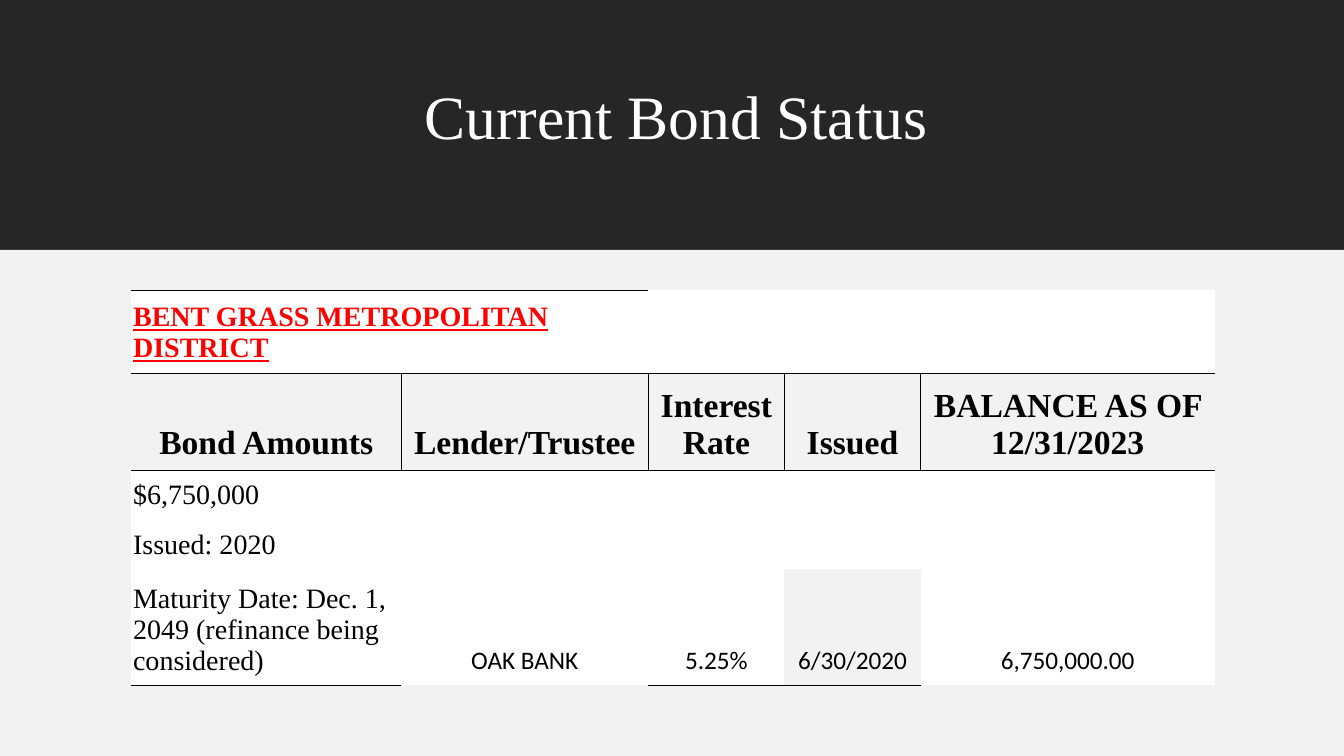
import pptx
import pptx.util
import pptx.dml.color
import pptx.enum.shapes
import pptx.enum.text
import pptx.oxml
import pptx.oxml.ns

Inches, Pt = pptx.util.Inches, pptx.util.Pt
RGB = pptx.dml.color.RGBColor
ALIGN = pptx.enum.text.PP_ALIGN
ANCHOR = pptx.enum.text.MSO_ANCHOR

BLACK = RGB(0, 0, 0)
WHITE = RGB(255, 255, 255)
DARK = RGB(0x26, 0x26, 0x26)
PALE = RGB(0xF2, 0xF2, 0xF2)
RED = RGB(255, 0, 0)
PLAIN = "{2D5ABB26-0587-4C30-8999-92F81FD0307C}"  # table style without lines


class Deck:
    serif = "Times New Roman"
    sans = "Calibri"

    def __init__(self, wide, high):
        self.prs = pptx.Presentation()
        self.prs.slide_width = Inches(wide)
        self.prs.slide_height = Inches(high)
        self.slide = self.prs.slides.add_slide(self.prs.slide_layouts[6])

    def band(self, top, high, color):
        shape = self.slide.shapes.add_shape(
            pptx.enum.shapes.MSO_SHAPE.RECTANGLE,
            0, Inches(top), self.prs.slide_width, Inches(high))
        shape.shadow.inherit = False
        shape.fill.solid()
        shape.fill.fore_color.rgb = color
        shape.line.fill.background()

    def text(self, frame, words, align, color, **font):
        para = frame.paragraphs[0]
        para.alignment = align
        run = para.add_run()
        run.text = words
        run.font.color.rgb = color
        for key, value in font.items():
            setattr(run.font, key, value)
        return para

    def title(self, words, left, top, wide, high):
        box = self.slide.shapes.add_textbox(*map(Inches, (left, top, wide, high)))
        frame = box.text_frame
        frame.word_wrap = True
        frame.vertical_anchor = ANCHOR.MIDDLE
        para = self.text(frame, words, ALIGN.CENTER, WHITE, name=self.serif, size=Pt(44))
        para.line_spacing = 0.9

    def table(self, left, top, cols, rows):
        frame = self.slide.shapes.add_table(
            len(rows), len(cols), Inches(left), Inches(top),
            Inches(sum(cols)), Inches(sum(rows)))
        table = frame.table
        table.first_row = table.horz_banding = False
        for style in frame._element.iter(pptx.oxml.ns.qn("a:tableStyleId")):
            style.text = PLAIN
        for col, wide in zip(table.columns, cols):
            col.width = Inches(wide)
        for row, high in zip(table.rows, rows):
            row.height = Inches(high)
        return table

    def edge(self, cell, lines):
        props = cell._tc.get_or_add_tcPr()
        for side in "LRTB":
            paint = '<a:solidFill><a:srgbClr val="000000"/></a:solidFill>'
            width = Pt(lines.get(side, 0))
            if not width:
                paint = "<a:noFill/>"
            props.append(pptx.oxml.parse_xml(
                f'<a:ln{side} {pptx.oxml.ns.nsdecls("a")} w="{width}">{paint}</a:ln{side}>'))

    def fill(self, cell, color):
        if color is None:
            cell.fill.background()
        else:
            cell.fill.solid()
            cell.fill.fore_color.rgb = color

    def cell(self, cell, words, align, color, **font):
        looks = dict(margin_left=Inches(0.02), margin_right=Inches(0.02),
                     margin_top=Inches(0.02), margin_bottom=Inches(0.09),
                     vertical_anchor=ANCHOR.BOTTOM)
        for key, value in looks.items():
            setattr(cell, key, value)
        self.text(cell.text_frame, words, align, color, **font)


def rules(row, col):
    """Line widths in points for each side of a table cell."""
    if row == 0:
        return {"T": 1, "B": 0.5} if col < 2 else {"B": 0.5}
    if row == 1:
        lines = {"T": 0.5, "B": 0.5}
        if 0 < col < 5:
            lines["L"] = 0.5
        if col < 4:
            lines["R"] = 0.5
        return lines
    if row == 2:
        return {"T": 0.5}
    if row == 4 and col in (0, 2, 3):
        return {"B": 1}
    return {}


def main():
    deck = Deck(13.33, 7.5)

    # Backdrop and title
    deck.band(0, 2.48, DARK)
    deck.band(2.48, 5.02, PALE)
    deck.title("Current Bond Status", 1.3, 0.36, 10.81, 1.66)

    # Table grid, lines and fills
    cols = [2.68, 2.45, 1.35, 1.35] + [0.73] * 4
    rows = [0.82, 0.97, 0.49, 0.49, 1.15]
    table = deck.table(1.3, 2.88, cols, rows)
    for row in range(len(rows)):
        for col in range(len(cols)):
            cell = table.cell(row, col)
            deck.edge(cell, rules(row, col))
            deck.fill(cell, None if row == 1 or (row, col) == (4, 3) else WHITE)
    for first, last in [((0, 0), (0, 1)), ((1, 4), (1, 7)),
                        ((2, 1), (4, 1)), ((2, 4), (4, 7))]:
        table.cell(*first).merge(table.cell(*last))

    # Table text
    deck.cell(table.cell(0, 0), "BENT GRASS METROPOLITAN DISTRICT", ALIGN.LEFT, RED,
              name=deck.serif, size=Pt(20), bold=True, underline=True)
    heads = ["Bond Amounts", "Lender/Trustee", "Interest Rate", "Issued",
             "BALANCE AS OF 12/31/2023"]
    for col, words in enumerate(heads):
        deck.cell(table.cell(1, col), words, ALIGN.CENTER, BLACK,
                  name=deck.serif, size=Pt(24), bold=True)
    terms = ["$6,750,000", "Issued: 2020",
             "Maturity Date: Dec. 1, 2049 (refinance being considered)"]
    for row, words in enumerate(terms, 2):
        deck.cell(table.cell(row, 0), words, ALIGN.LEFT, BLACK,
                  name=deck.serif, size=Pt(20))
    facts = {(2, 1): "OAK BANK", (4, 2): "5.25%", (4, 3): "6/30/2020",
             (2, 4): "6,750,000.00"}
    for place, words in facts.items():
        deck.cell(table.cell(*place), words, ALIGN.CENTER, BLACK,
                  name=deck.sans, size=Pt(18))

    deck.prs.save("out.pptx")


if __name__ == "__main__":
    main()
